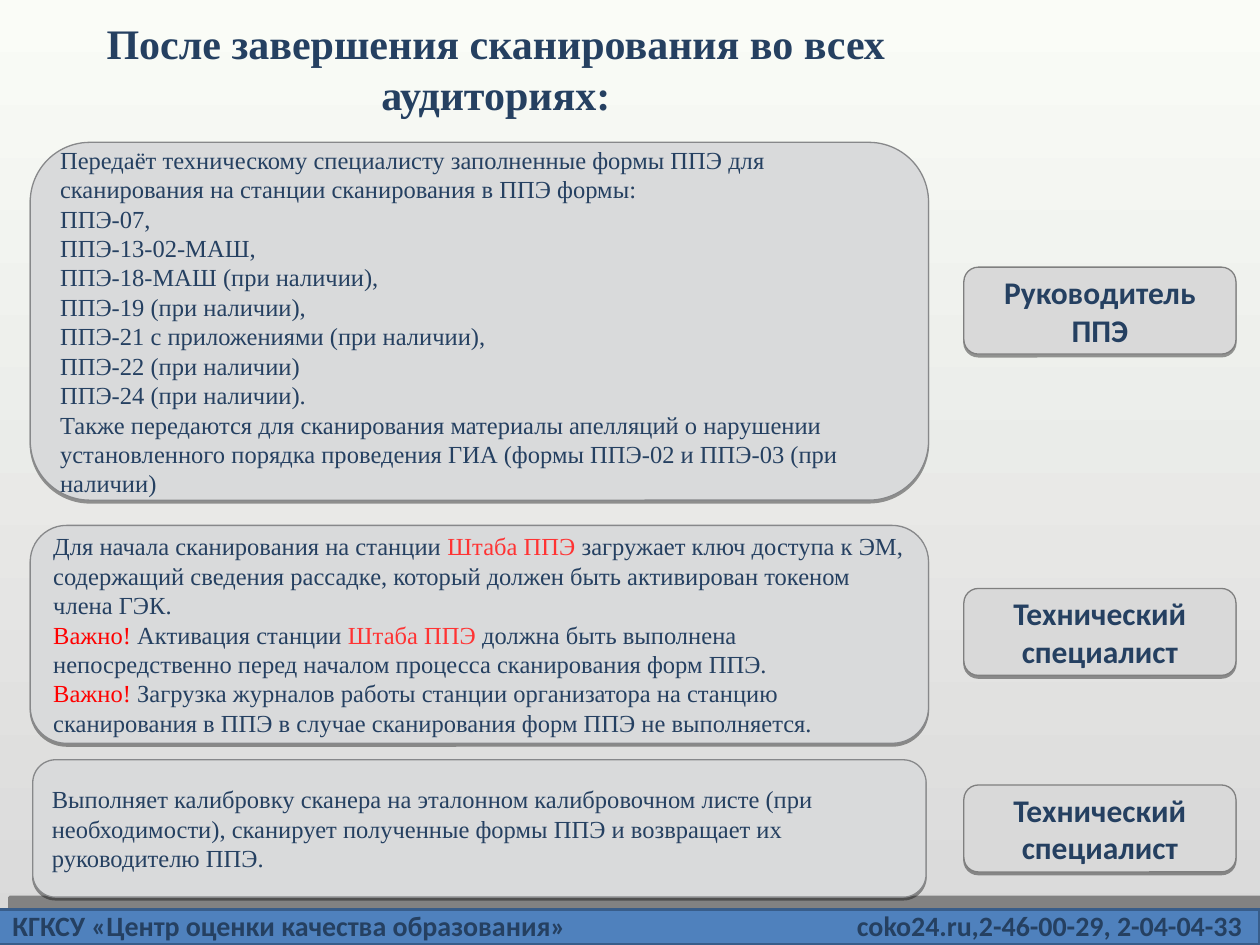
"""Build the slide on what happens once scanning is finished in every room."""
from lxml import etree
from pptx import Presentation
from pptx import util as u
from pptx.dml.color import RGBColor
from pptx.enum import shapes, text
from pptx.oxml.ns import qn

NAVY, RED, SOFT_RED = "254061", "FF0000", "FF3333"
SERIF, SANS = "Times New Roman", "Calibri"


def rgb(value):
    return RGBColor.from_string(value)


def write(tf, paragraphs, size=14, font=SERIF, color=NAVY, bold=False,
          align=text.PP_ALIGN.LEFT, anchor=text.MSO_ANCHOR.MIDDLE):
    """Fill a frame; a paragraph is a string or a list of (text, colour) runs."""
    tf.word_wrap = True
    tf.auto_size = text.MSO_AUTO_SIZE.NONE
    tf.vertical_anchor = anchor
    for i, runs in enumerate(paragraphs):
        p = tf.add_paragraph() if i else tf.paragraphs[0]
        p.alignment = align
        if isinstance(runs, str):
            runs = [(runs, color)]
        for words, run_color in runs:
            r = p.add_run()
            r.text = words
            r.font.name, r.font.size, r.font.bold = font, u.Pt(size), bold
            r.font.color.rgb = rgb(run_color)


class Deck:
    def __init__(self):
        self.prs = Presentation()
        self.prs.slide_width, self.prs.slide_height = u.Inches(10), u.Inches(7.5)
        self.s = self.prs.slides.add_slide(self.prs.slide_layouts[5])

    def background(self, top, bottom):
        fill = self.s.background.fill
        fill.gradient()
        fill.gradient_angle = 270
        for stop, color, position in zip(fill.gradient_stops, (top, bottom), (0, 1)):
            stop.color.rgb = rgb(color)
            stop.position = position

    def title(self, words, box):
        sp = self.s.shapes.title
        sp.left, sp.top, sp.width, sp.height = map(u.Inches, box)
        write(sp.text_frame, [words], size=24, bold=True,
              align=text.PP_ALIGN.CENTER, anchor=text.MSO_ANCHOR.TOP)

    def shadow(self, sp, distance, angle, alpha):
        sp.shadow.inherit = False
        effects = sp._element.spPr.find(qn("a:effectLst"))
        outer = etree.SubElement(effects, qn("a:outerShdw"), blurRad="0",
                                 dist=str(u.Pt(distance)), dir=str(angle * 60000),
                                 algn="ctr", rotWithShape="0")
        black = etree.SubElement(outer, qn("a:srgbClr"), val="000000")
        etree.SubElement(black, qn("a:alpha"), val=str(alpha * 1000))

    def block(self, kind, box, fill, line, width=0.75, distance=1.6, angle=90, alpha=38):
        sp = self.s.shapes.add_shape(kind, *map(u.Inches, box))
        sp.fill.solid()
        sp.fill.fore_color.rgb = rgb(fill)
        sp.line.color.rgb = rgb(line)
        sp.line.width = u.Pt(width)
        self.shadow(sp, distance, angle, alpha)
        return sp

    def task(self, paragraphs, box):
        sp = self.block(shapes.MSO_SHAPE.ROUNDED_RECTANGLE, box, "D9DADB", "87888A")
        write(sp.text_frame, paragraphs)

    def role(self, words, top):
        sp = self.block(shapes.MSO_SHAPE.ROUNDED_RECTANGLE, (7.65, top, 2.16, 0.69),
                        "D9D9D9", "7F7F7F")
        write(sp.text_frame, [words], size=18, font=SANS, bold=True,
              align=text.PP_ALIGN.CENTER)

    def footer(self, left, right):
        self.block(shapes.MSO_SHAPE.RECTANGLE, (-0.02, 7.22, 10.02, 0.28), "4F81BD",
                   "385D8A", width=2, distance=10, angle=315, alpha=40)
        sp = self.s.shapes.add_textbox(*map(u.Inches, (0, 7.16, 10, 0.37)))
        tf = sp.text_frame
        tabs = etree.SubElement(tf.paragraphs[0]._p.get_or_add_pPr(), qn("a:tabLst"))
        etree.SubElement(tabs, qn("a:tab"), pos=str(u.Inches(9.76)), algn="r")
        write(tf, [f"{left}\t{right}"], size=16, font=SANS, bold=True,
              anchor=text.MSO_ANCHOR.TOP)


def main():
    deck = Deck()
    deck.background("FAFCF7", "D9D9D9")
    deck.footer("КГКСУ «Центр оценки качества образования»",
                "coko24.ru,2-46-00-29, 2-04-04-33")
    deck.title("После завершения сканирования во всех аудиториях:", (0.49, 0.09, 6.89, 0.9))

    deck.task([
        "Передаёт техническому специалисту заполненные формы ППЭ для сканирования "
        "на станции сканирования в ППЭ формы:",
        "ППЭ-07,",
        "ППЭ-13-02-МАШ,",
        "ППЭ-18-МАШ (при наличии),",
        "ППЭ-19 (при наличии),",
        "ППЭ-21 с приложениями (при наличии),",
        "ППЭ-22 (при наличии)",
        "ППЭ-24 (при наличии).",
        "Также передаются для сканирования материалы апелляций о нарушении",
        "установленного порядка проведения ГИА (формы ППЭ-02 и ППЭ-03 (при наличии)",
    ], (0.24, 1.13, 7.13, 2.84))

    station = ("Штаба ППЭ", SOFT_RED)
    important = ("Важно!", RED)
    deck.task([
        [("Для начала сканирования на станции ", NAVY), station,
         (" загружает ключ доступа к ЭМ, содержащий сведения рассадке, который должен "
          "быть активирован токеном члена ГЭК.", NAVY)],
        [important, (" Активация станции ", NAVY), station,
         (" должна быть выполнена непосредственно перед началом процесса сканирования "
          "форм ППЭ.", NAVY)],
        [important,
         (" Загрузка журналов работы станции организатора на станцию сканирования в ППЭ "
          "в случае сканирования форм ППЭ не выполняется.", NAVY)],
    ], (0.24, 4.17, 7.13, 1.73))

    deck.task([
        "Выполняет калибровку сканера на эталонном калибровочном листе (при "
        "необходимости), сканирует полученные формы ППЭ и возвращает их "
        "руководителю ППЭ.",
    ], (0.26, 6.03, 7.09, 1.09))

    for words, top in (("Руководитель ППЭ", 2.12), ("Технический специалист", 4.67),
                       ("Технический специалист", 6.23)):
        deck.role(words, top)
    deck.prs.save("out.pptx")


if __name__ == "__main__":
    main()
